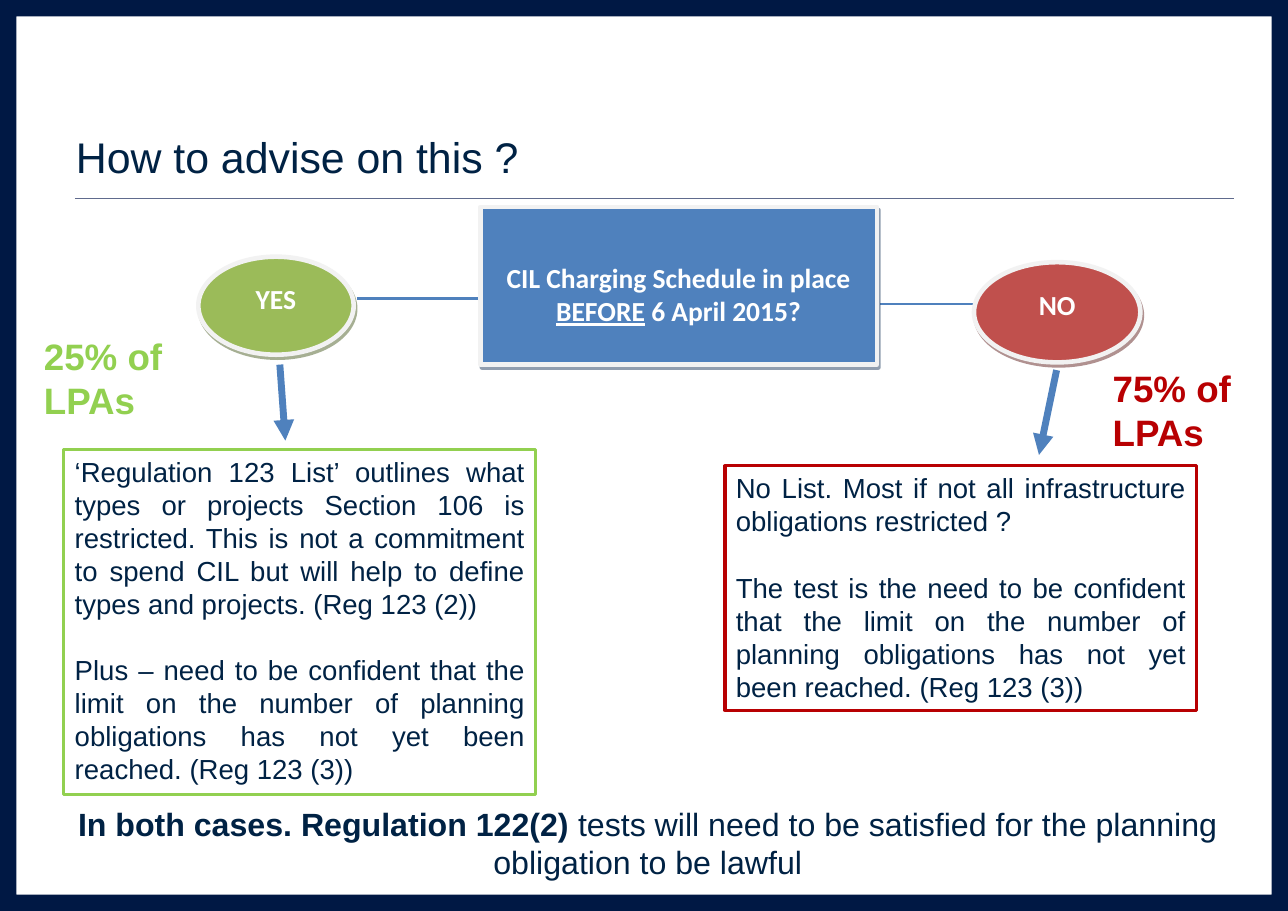
from lxml.etree import SubElement
from pptx import Presentation
from pptx.dml.color import RGBColor
from pptx.enum.shapes import MSO_CONNECTOR, MSO_SHAPE
from pptx.enum.text import MSO_ANCHOR, PP_ALIGN
from pptx.oxml.ns import qn
from pptx.util import Pt

PX = 9144  # 100 px to the inch
WIDTH, HEIGHT = 1169, 827
NAVY = RGBColor(0x00, 0x18, 0x44)
INK = RGBColor(0x00, 0x22, 0x44)
RULE = RGBColor(0x60, 0x6B, 0x8D)
BLUE = RGBColor(0x4F, 0x81, 0xBD)
OLIVE = RGBColor(0x9B, 0xBB, 0x59)
BRICK = RGBColor(0xC0, 0x50, 0x4D)
GREEN = RGBColor(0x92, 0xD0, 0x50)
RED = RGBColor(0xB8, 0x00, 0x02)
PALE = RGBColor(0xF2, 0xF2, 0xF2)
WHITE = RGBColor(0xFF, 0xFF, 0xFF)
OLIVE_SHADOW = RGBColor(0x4E, 0x61, 0x28)
BRICK_SHADOW = RGBColor(0x62, 0x24, 0x23)
BLUE_SHADOW = RGBColor(0x24, 0x3F, 0x60)

prs = Presentation()
prs.slide_width, prs.slide_height = WIDTH * PX, HEIGHT * PX
s = prs.slides.add_slide(prs.slide_layouts[6])


def add_box(kind, at, fill=None, line=None, width=0):
    """Add a preset shape, or a text box when kind is None."""
    at = [v * PX for v in at]
    if kind is None:
        return s.shapes.add_textbox(*at)
    sp = s.shapes.add_shape(kind, *at)
    sp.shadow.inherit = False
    sp.fill.solid()
    sp.fill.fore_color.rgb = fill
    if line is None:
        sp.line.fill.background()
    else:
        sp.line.color.rgb = line
        sp.line.width = Pt(width)
    return sp


def write(sp, paragraphs, fmt, align=PP_ALIGN.LEFT, insets=(10, 5, 10, 5),
          anchor=MSO_ANCHOR.TOP, gap=0):
    """Fill a shape; each paragraph is a list of (text, font changes)."""
    tf = sp.text_frame
    tf.word_wrap = True
    tf.vertical_anchor = anchor
    for side, inset in zip(("left", "top", "right", "bottom"), insets):
        setattr(tf, f"margin_{side}", inset * PX)
    for i, runs in enumerate(paragraphs):
        p = tf.add_paragraph() if i else tf.paragraphs[0]
        p.alignment = align
        p.space_before = Pt(gap if i else 0)
        for text, changes in runs:
            r = p.add_run()
            r.text = text
            look = {**fmt, **changes}
            r.font.color.rgb = look.pop("color")
            for name, value in look.items():
                setattr(r.font, name, value)


# Frame and title
frame = add_box(MSO_SHAPE.FRAME, (0, 0, WIDTH, HEIGHT), NAVY)
frame.adjustments[0] = 0.018
title = add_box(None, (58, 33, 1053, 138))
write(title, [[("How to advise on this ?", {})]],
      {"name": "Arial", "size": Pt(28), "color": INK},
      insets=(11, 6, 11, 6), anchor=MSO_ANCHOR.BOTTOM)

# Title rule, links and arrows
for ends, color, width, arrow in (
    ((68, 180, 1120, 180), RULE, 0.75, False),
    ((324, 271, 440, 271), BLUE, 1.5, False),
    ((799, 276, 915, 276), BLUE, 1.5, False),
    ((254, 331, 259, 400), BLUE, 4.5, True),
    ((959, 336, 943, 413), BLUE, 4.5, True),
):
    c = s.shapes.add_connector(MSO_CONNECTOR.STRAIGHT, *[v * PX for v in ends])
    c.line.color.rgb = color
    c.line.width = Pt(width)
    if arrow:
        SubElement(c.line._get_or_add_ln(), qn("a:tailEnd"), type="triangle")
    SubElement(c._element.spPr, qn("a:effectLst"))

# Question and its two answers
QUESTION = [("CIL Charging Schedule in place ", {}),
            ("BEFORE", {"underline": True}), (" 6 April 2015?", {})]
for kind, at, fill, shade, runs, insets in (
    (MSO_SHAPE.OVAL, (180, 233, 141, 89), OLIVE, OLIVE_SHADOW,
     [("YES", {})], (10, 10, 10, 10)),
    (MSO_SHAPE.OVAL, (884, 238, 151, 91), BRICK, BRICK_SHADOW,
     [("NO", {})], (10, 10, 10, 10)),
    (MSO_SHAPE.RECTANGLE, (436, 188, 360, 143), BLUE, BLUE_SHADOW,
     QUESTION, (10, 49, 10, 5)),
):
    sp = add_box(kind, at, fill, PALE, 3)
    effects = sp._element.spPr.find(qn("a:effectLst"))
    shadow = SubElement(effects, qn("a:outerShdw"), dist=str(Pt(2.2)),
                        dir=str(63 * 60000), algn="ctr", rotWithShape="0")
    tint = SubElement(shadow, qn("a:srgbClr"), val=str(shade))
    SubElement(tint, qn("a:alpha"), val="50000")
    write(sp, [runs], {"name": "Calibri", "size": Pt(18), "bold": True, "color": WHITE},
          PP_ALIGN.CENTER, insets)

# Consequences
for at, color, texts in (
    ((58, 408, 428, 313), GREEN, (
        "‘Regulation 123 List’ outlines what types or projects Section 106 is "
        "restricted. This is not a commitment to spend CIL but will help to "
        "define types and projects. (Reg 123 (2))",
        "Plus – need to be confident that the limit on the number of planning "
        "obligations has not yet been reached. (Reg 123 (3))")),
    ((658, 423, 428, 222), RED, (
        "No List. Most if not all infrastructure obligations restricted ?",
        "The test is the need to be confident that the limit on the number of "
        "planning obligations has not yet been reached. (Reg 123 (3))")),
):
    write(add_box(MSO_SHAPE.RECTANGLE, at, WHITE, color, 2),
          [[(text, {})] for text in texts],
          {"name": "Arial", "size": Pt(18), "color": INK},
          PP_ALIGN.JUSTIFY, gap=21.6)

# Shares of authorities
for at, color, text in (
    ((30, 298, 138, 91), GREEN, "25% of LPAs"),
    ((1000, 327, 138, 91), RED, "75% of LPAs"),
):
    write(add_box(None, at), [[(text, {})]],
          {"name": "Arial", "size": Pt(24), "bold": True, "color": color})

# Conclusion
write(add_box(None, (56, 725, 1064, 81)),
      [[("In both cases. Regulation 122(2) ", {"bold": True}),
        ("tests will need to be satisfied for the planning obligation to be lawful", {})]],
      {"name": "Arial", "size": Pt(21), "color": INK}, PP_ALIGN.CENTER)

prs.save("out.pptx")
